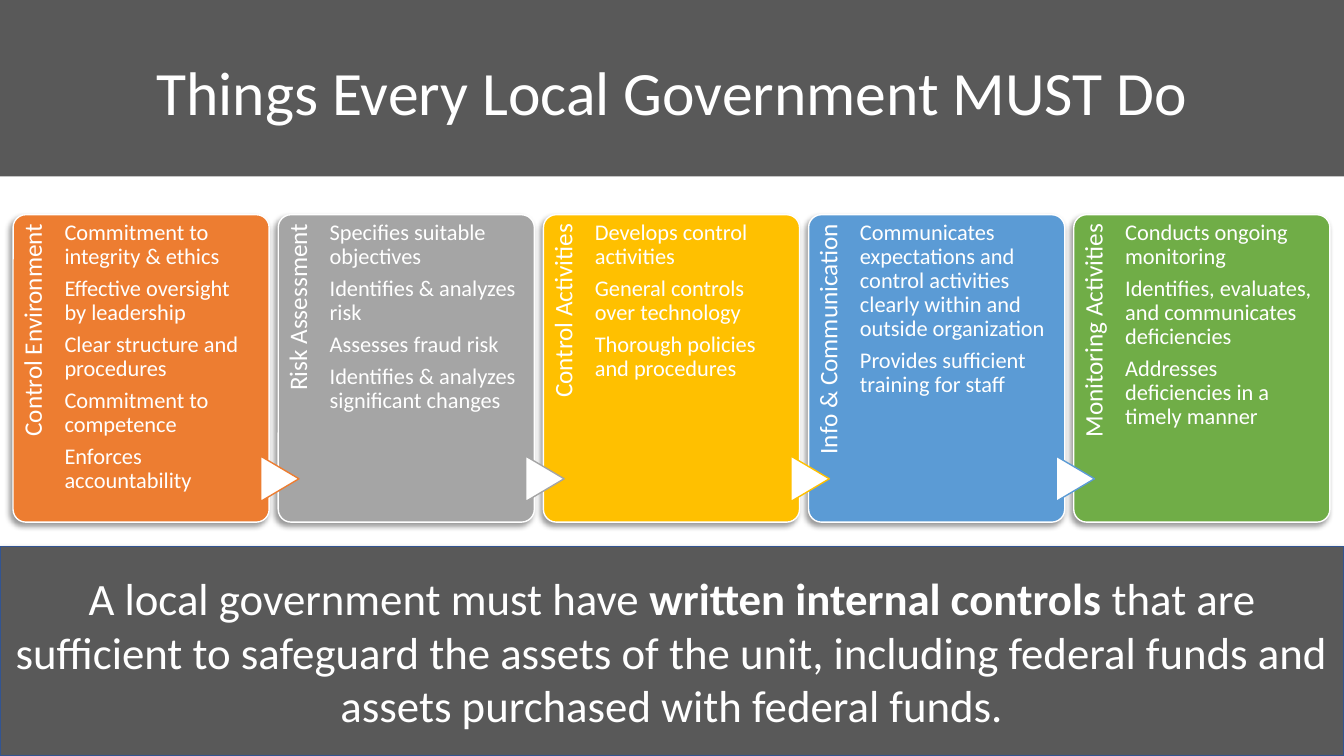
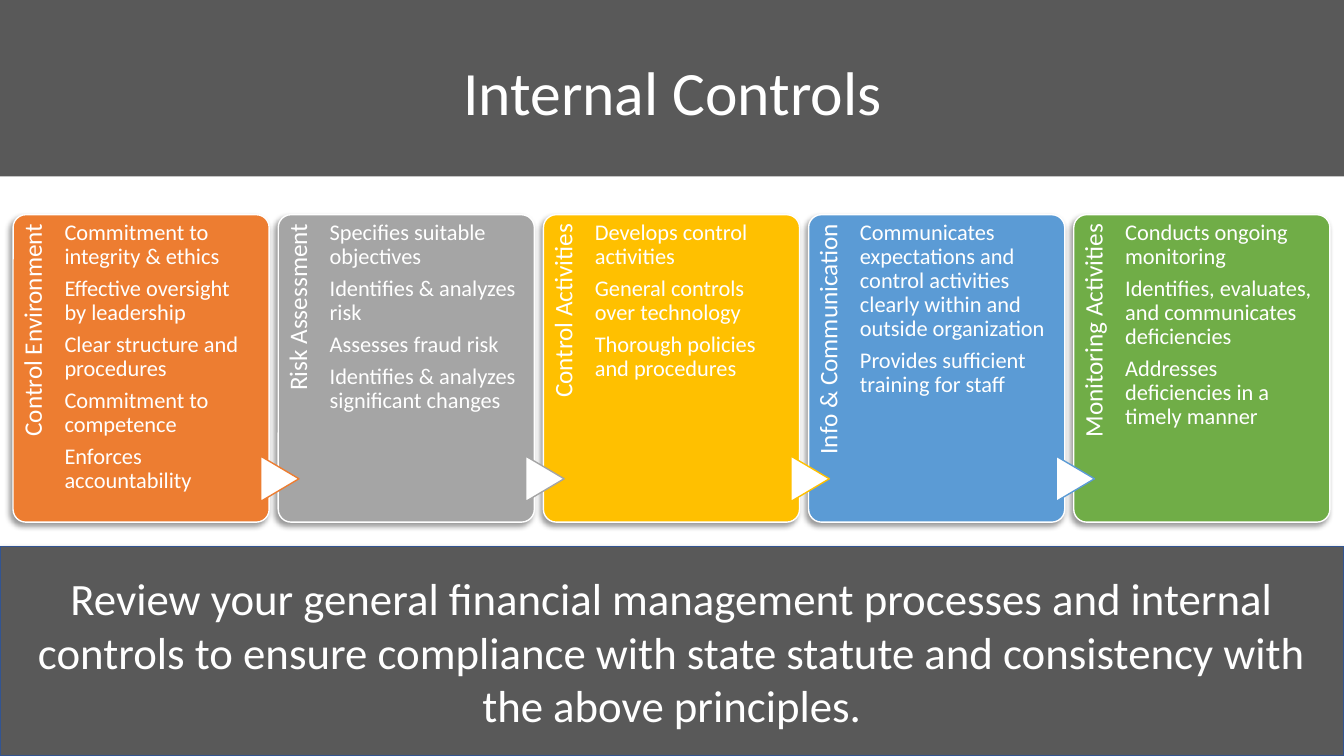
from dataclasses import dataclass

from lxml.etree import SubElement
from pptx import Presentation
from pptx.dml.color import RGBColor
from pptx.enum.shapes import MSO_SHAPE
from pptx.enum.text import MSO_ANCHOR, PP_ALIGN
from pptx.oxml.ns import qn
from pptx.shapes.autoshape import Shape
from pptx.slide import Slide
from pptx.util import Inches, Pt

FONT = "Calibri"
WHITE = "FFFFFF"
BAND_FILL = "595959"
BAND_LINE = "325491"

SLIDE_WIDTH, SLIDE_HEIGHT = 13.33, 7.5
FOOTER_TOP = 5.42
CARD_LEFT, CARD_TOP = 0.13, 2.13
CARD_WIDTH, CARD_HEIGHT = 2.54, 3.05
CARD_PITCH = 2.63
LABEL_LENGTH, LABEL_DEPTH = 2.5, 0.51
ARROW_WIDTH, ARROW_HEIGHT = 0.45, 0.38


@dataclass(frozen=True)
class Box:
    left: float
    top: float
    width: float
    height: float

    def lengths(self) -> tuple[int, ...]:
        return tuple(Inches(n) for n in (self.left, self.top, self.width, self.height))


@dataclass(frozen=True)
class Run:
    text: str
    bold: bool = False


@dataclass(frozen=True)
class Card:
    label: str
    color: str
    points: tuple[str, ...]


@dataclass(frozen=True)
class Page:
    title: str
    message: tuple[Run, ...]


CARDS = (
    Card("Control Environment", "ED7D31", (
        "Commitment to integrity & ethics",
        "Effective oversight by leadership",
        "Clear structure and procedures",
        "Commitment to competence",
        "Enforces accountability",
    )),
    Card("Risk Assessment", "A5A5A5", (
        "Specifies suitable objectives",
        "Identifies & analyzes risk",
        "Assesses fraud risk",
        "Identifies & analyzes significant changes",
    )),
    Card("Control Activities", "FFC000", (
        "Develops control activities",
        "General controls over technology",
        "Thorough policies and procedures",
    )),
    Card("Info & Communication", "5B9BD5", (
        "Communicates expectations and control activities clearly within and "
        "outside organization",
        "Provides sufficient training for staff",
    )),
    Card("Monitoring Activities", "70AD47", (
        "Conducts ongoing monitoring",
        "Identifies, evaluates, and communicates deficiencies",
        "Addresses deficiencies in a timely manner",
    )),
)

PAGES = (
    Page("Things Every Local Government MUST Do", (
        Run("A local government must have "),
        Run("written internal controls ", bold=True),
        Run("that are sufficient to safeguard the assets of the unit, including "
            "federal funds and assets purchased with federal funds."),
    )),
    Page("Internal Controls", (
        Run("Review your general financial management processes and internal "
            "controls to ensure compliance with state statute and consistency "
            "with the above principles."),
    )),
)


def rgb(color: str) -> RGBColor:
    return RGBColor.from_string(color)


def add_shadow(shape: Shape) -> None:
    effects = shape.element.spPr.find(qn("a:effectLst"))
    shadow = SubElement(
        effects, qn("a:outerShdw"), blurRad=str(Pt(4)), dist=str(Pt(3)),
        dir=str(135 * 60000), algn="ctr", rotWithShape="0",
    )
    color = SubElement(shadow, qn("a:srgbClr"), val="000000")
    SubElement(color, qn("a:alpha"), val="40000")


def add_panel(slide: Slide, kind: MSO_SHAPE, box: Box, fill: str,
              line: str | None = None, shadow: bool = False) -> Shape:
    shape = slide.shapes.add_shape(kind, *box.lengths())
    shape.shadow.inherit = False
    shape.fill.solid()
    shape.fill.fore_color.rgb = rgb(fill)
    if line:
        shape.line.color.rgb = rgb(line)
        shape.line.width = Pt(1)
    else:
        shape.line.fill.background()
    if shadow:
        add_shadow(shape)
    return shape


def write(shape: Shape, paragraphs: list[tuple[Run, ...]], size: int,
          align: PP_ALIGN = PP_ALIGN.LEFT, anchor: MSO_ANCHOR = MSO_ANCHOR.TOP,
          spacing: float = 0.9, after: float = 0,
          insets: tuple[float, float, float, float] = (0.1, 0.05, 0.1, 0.05)) -> None:
    frame = shape.text_frame
    frame.word_wrap = True
    frame.vertical_anchor = anchor
    (frame.margin_left, frame.margin_top,
     frame.margin_right, frame.margin_bottom) = (Inches(inset) for inset in insets)
    for index, runs in enumerate(paragraphs):
        paragraph = frame.add_paragraph() if index else frame.paragraphs[0]
        paragraph.alignment = align
        paragraph.line_spacing = spacing
        paragraph.space_after = Pt(after)
        for part in runs:
            run = paragraph.add_run()
            run.text = part.text
            run.font.name = FONT
            run.font.size = Pt(size)
            run.font.bold = part.bold
            run.font.color.rgb = rgb(WHITE)


def add_card(slide: Slide, card: Card, left: float) -> None:
    panel = add_panel(slide, MSO_SHAPE.ROUNDED_RECTANGLE,
                      Box(left, CARD_TOP, CARD_WIDTH, CARD_HEIGHT),
                      card.color, WHITE, shadow=True)
    panel.adjustments[0] = 0.05

    label_box = Box(left + (LABEL_DEPTH - LABEL_LENGTH) / 2,
                    CARD_TOP + (LABEL_LENGTH - LABEL_DEPTH) / 2,
                    LABEL_LENGTH, LABEL_DEPTH)
    label = slide.shapes.add_textbox(*label_box.lengths())
    label.rotation = 270
    write(label, [(Run(card.label),)], 18, PP_ALIGN.RIGHT,
          insets=(0, 0.07, 0.09, 0))

    body_box = Box(left + LABEL_DEPTH, CARD_TOP, 1.9, CARD_HEIGHT)
    body = slide.shapes.add_textbox(*body_box.lengths())
    write(body, [(Run(point),) for point in card.points], 16, after=5.6,
          insets=(0, 0.06, 0, 0))


def add_arrow(slide: Slide, next_left: float, color: str) -> None:
    box = Box(next_left - 0.21, 4.56, ARROW_WIDTH, ARROW_HEIGHT)
    arrow = add_panel(slide, MSO_SHAPE.FLOWCHART_EXTRACT, box, WHITE, color)
    arrow.rotation = 90


def add_page(presentation: Presentation, page: Page) -> None:
    slide = presentation.slides.add_slide(presentation.slide_layouts[6])

    for index, card in enumerate(CARDS):
        left = CARD_LEFT + index * CARD_PITCH
        add_card(slide, card, left)
        if index:
            add_arrow(slide, left, CARDS[index - 1].color)

    add_panel(slide, MSO_SHAPE.RECTANGLE, Box(0, 0, SLIDE_WIDTH, 1.75), BAND_FILL)
    title = slide.shapes.add_textbox(*Box(0.92, 0.22, 11.5, 1.45).lengths())
    write(title, [(Run(page.title),)], 44, PP_ALIGN.CENTER, MSO_ANCHOR.MIDDLE)

    footer_box = Box(0, FOOTER_TOP, SLIDE_WIDTH, SLIDE_HEIGHT - FOOTER_TOP)
    footer = add_panel(slide, MSO_SHAPE.RECTANGLE, footer_box, BAND_FILL,
                       BAND_LINE, shadow=True)
    write(footer, [page.message], 32, PP_ALIGN.CENTER, MSO_ANCHOR.MIDDLE, spacing=1.0)


def main() -> None:
    presentation = Presentation()
    presentation.slide_width = Inches(SLIDE_WIDTH)
    presentation.slide_height = Inches(SLIDE_HEIGHT)
    for page in PAGES:
        add_page(presentation, page)
    presentation.save("out.pptx")


if __name__ == "__main__":
    main()
